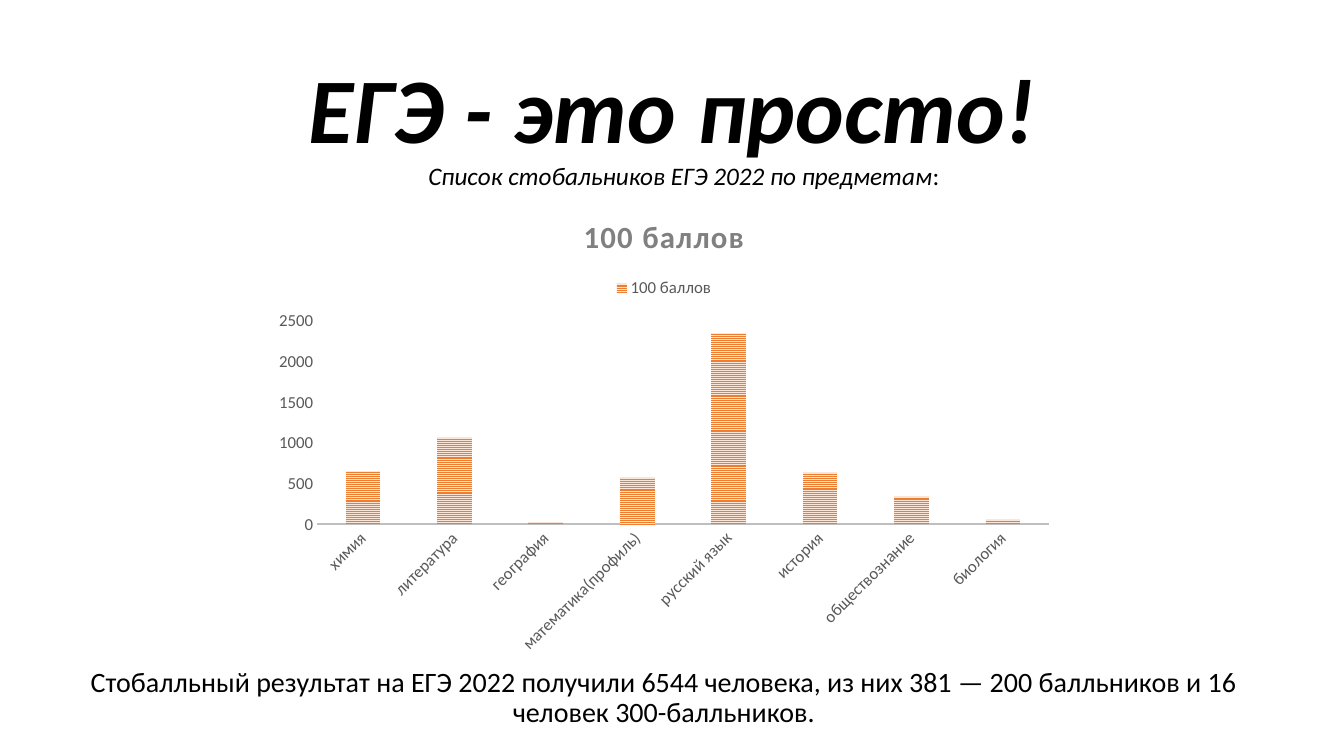
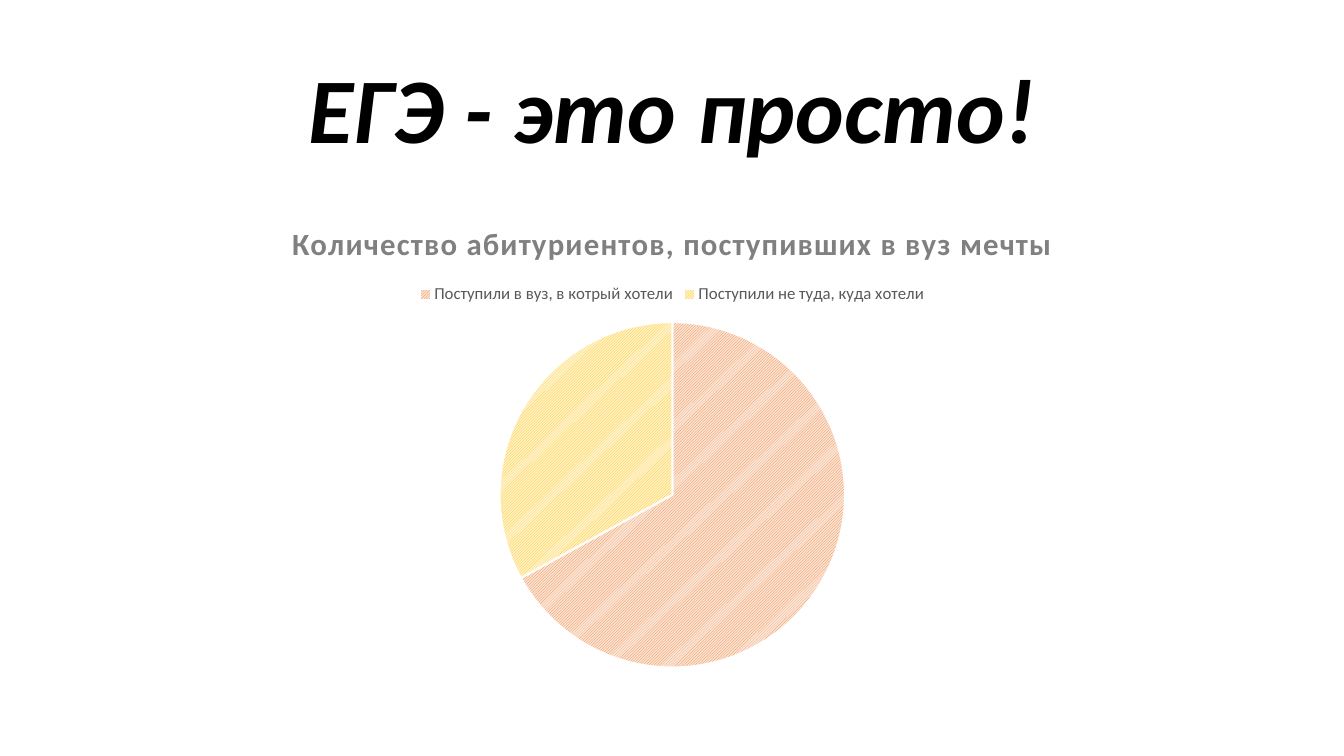
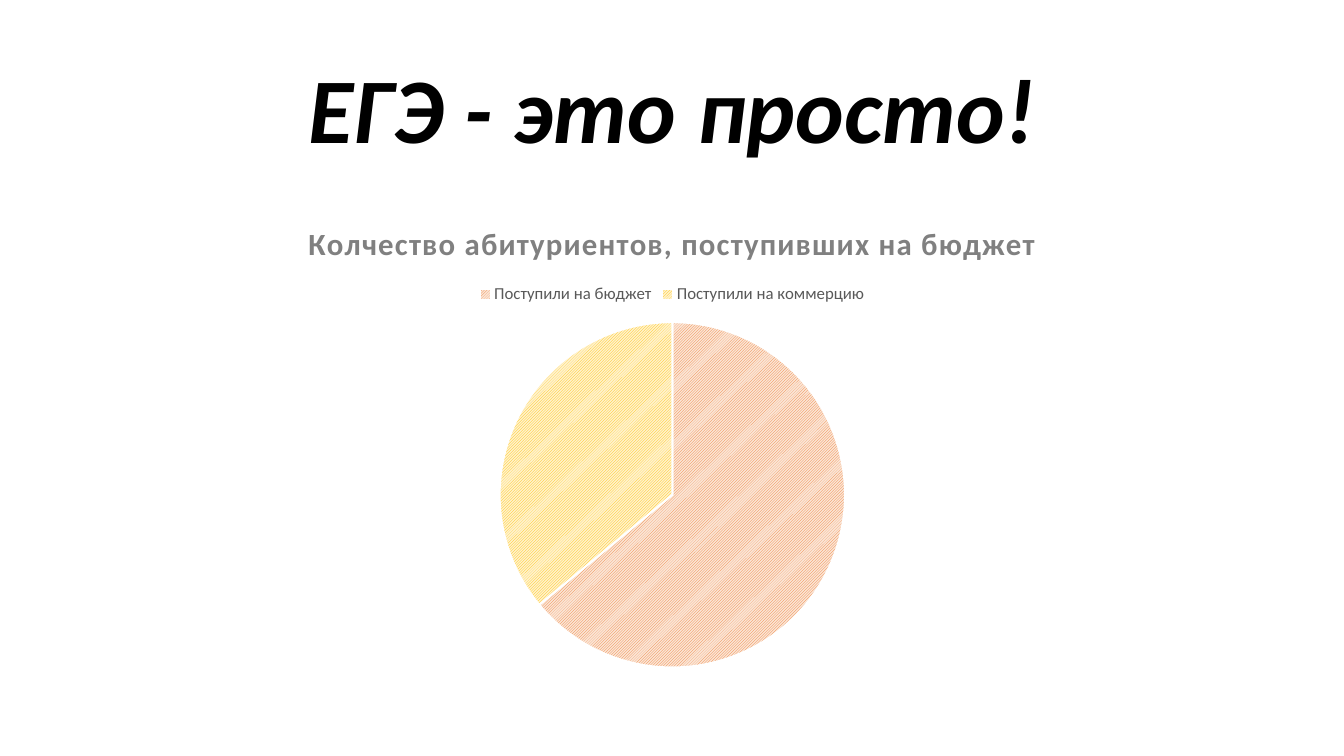
from lxml.etree import SubElement
from pptx import Presentation
from pptx.chart.data import CategoryChartData
from pptx.dml.color import RGBColor
from pptx.enum.chart import XL_CHART_TYPE as ChartType, XL_LEGEND_POSITION as LegendPosition
from pptx.enum.chart import XL_TICK_MARK as TickMark
from pptx.enum.dml import MSO_PATTERN as Pattern
from pptx.enum.text import MSO_ANCHOR as Anchor, PP_ALIGN as Align
from pptx.oxml.ns import qn
from pptx.util import Inches, Pt

FONT = "Calibri"
BLACK = RGBColor(0x00, 0x00, 0x00)
WHITE = RGBColor(0xFF, 0xFF, 0xFF)
TITLE_GRAY = RGBColor(0x80, 0x80, 0x80)
LABEL_GRAY = RGBColor(0x59, 0x59, 0x59)
AXIS_GRAY = RGBColor(0xBF, 0xBF, 0xBF)
ORANGE = RGBColor(0xED, 0x7D, 0x31)
PALE_ORANGE = RGBColor(0xFB, 0xE5, 0xD6)
YELLOW = RGBColor(0xFF, 0xC0, 0x00)
PALE_YELLOW = RGBColor(0xFF, 0xF2, 0xCC)
STRIPES = [(ORANGE, PALE_ORANGE), (YELLOW, PALE_YELLOW)]

# Left, top, width and height in percent of the slide
TITLE_AREA = (6.9, 5.33, 86.25, 19.33)
SUBTITLE_AREA = (31.13, 20.53, 39.98, 5.33)
COLUMN_AREA = (19.58, 25.87, 59.64, 61.87)
PIE_AREA = (6.9, 26.67, 86.25, 63.47)
SUMMARY_AREA = (4.95, 87.73, 88.9, 12.27)

CHARTS = [
    (ChartType.COLUMN_CLUSTERED, COLUMN_AREA, "100 баллов",
     {"химия": 660, "литература": 1070, "география": 30, "математика(профиль)": 580,
      "русский язык": 2360, "история": 640, "обществознание": 350, "биология": 60}),
    (ChartType.PIE, PIE_AREA, "Количество абитуриентов, поступивших в вуз мечты",
     {"Поступили в вуз, в котрый хотели": 67, "Поступили не туда, куда хотели": 33}),
    (ChartType.PIE, PIE_AREA, "Колчество абитуриентов, поступивших на бюджет",
     {"Поступили на бюджет": 64, "Поступили на коммерцию": 36}),
]

deck = Presentation()
deck.slide_width, deck.slide_height = Inches(13.33), Inches(7.5)


def place(area):
    """Turn percentages of the slide into lengths."""
    sides = (deck.slide_width, deck.slide_height) * 2
    return [int(side * share / 100) for side, share in zip(sides, area)]


def add_text(slide, area, runs, size, bold=False):
    """Write one paragraph; each run is a pair of text and italic."""
    frame = slide.shapes.add_textbox(*place(area)).text_frame
    frame.word_wrap = True
    para = frame.paragraphs[0]
    para.alignment = Align.CENTER
    para.line_spacing = 0.9
    for text, italic in runs:
        span = para.add_run()
        span.text = text
        font = span.font
        font.name, font.size, font.bold, font.italic = FONT, Pt(size), bold, italic
        font.color.rgb = BLACK
    return frame


for chart_type, area, heading, values in CHARTS:
    slide = deck.slides.add_slide(deck.slide_layouts[6])

    title = add_text(slide, TITLE_AREA, [("ЕГЭ - это просто!", True)], 66, bold=True)
    title.vertical_anchor = Anchor.MIDDLE
    properties = title.paragraphs[0].runs[0]._r.get_or_add_rPr()
    outline = SubElement(properties, qn("a:ln"), w=str(Pt(0.75)))
    outline_fill = SubElement(outline, qn("a:solidFill"))
    SubElement(outline_fill, qn("a:srgbClr"), val=str(WHITE))
    properties.insert(0, outline)

    data = CategoryChartData()
    data.categories = list(values)
    data.add_series(heading, list(values.values()))
    chart = slide.shapes.add_chart(chart_type, *place(area), data).chart
    chart.font.name, chart.font.size = FONT, Pt(12)
    chart.font.color.rgb = LABEL_GRAY

    span = chart.chart_title.text_frame.paragraphs[0].add_run()
    span.text = heading
    span.font.name, span.font.size, span.font.bold = FONT, Pt(22), True
    span.font.color.rgb = TITLE_GRAY
    span._r.get_or_add_rPr().set("spc", "100")
    chart.chart_title.include_in_layout = False

    chart.has_legend = True
    chart.legend.position = LegendPosition.TOP
    chart.legend.include_in_layout = False

    plot = chart.plots[0]
    series = plot.series[0]
    if chart_type == ChartType.PIE:
        plot.vary_by_categories = True
        pattern = Pattern.LIGHT_UPWARD_DIAGONAL
        formats = [series.points[index].format for index in range(len(values))]
        for point_format in formats:
            point_format.line.color.rgb = WHITE
            point_format.line.width = Pt(1.5)
    else:
        plot.vary_by_categories = False
        plot.gap_width, plot.overlap = 164, -22
        pattern = Pattern.NARROW_HORIZONTAL
        formats = [series.format]
        for axis in (chart.category_axis, chart.value_axis):
            axis.major_tick_mark = axis.minor_tick_mark = TickMark.NONE
            axis.has_major_gridlines = False
            axis.tick_labels.font.size = Pt(12)
            axis.tick_labels.font.color.rgb = LABEL_GRAY
        chart.category_axis.format.line.color.rgb = AXIS_GRAY
        chart.category_axis.format.line.width = Pt(1.5)
        chart.value_axis.format.line.fill.background()
        labels = chart.category_axis._element.find(f"{qn('c:txPr')}/{qn('a:bodyPr')}")
        labels.set("rot", str(-45 * 60000))

        subtitle = add_text(slide, SUBTITLE_AREA, [
            ("Список стобальников ЕГЭ 2022 по предметам", True), (":", False)], 18)
        subtitle.word_wrap = False
        subtitle.paragraphs[0].alignment = Align.LEFT
        subtitle.paragraphs[0].line_spacing = 1.0
        summary = add_text(slide, SUMMARY_AREA, [
            ("Стобалльный результат на ЕГЭ 2022 получили 6544 человека, из них 381 — "
             "200 балльников и 16 человек 300-балльников.", False)], 20)
        summary.paragraphs[0].space_before = Pt(10)

    for stripe_format, (stripe, ground) in zip(formats, STRIPES):
        stripe_format.fill.patterned()
        stripe_format.fill.pattern = pattern
        stripe_format.fill.fore_color.rgb = stripe
        stripe_format.fill.back_color.rgb = ground

deck.save("out.pptx")
